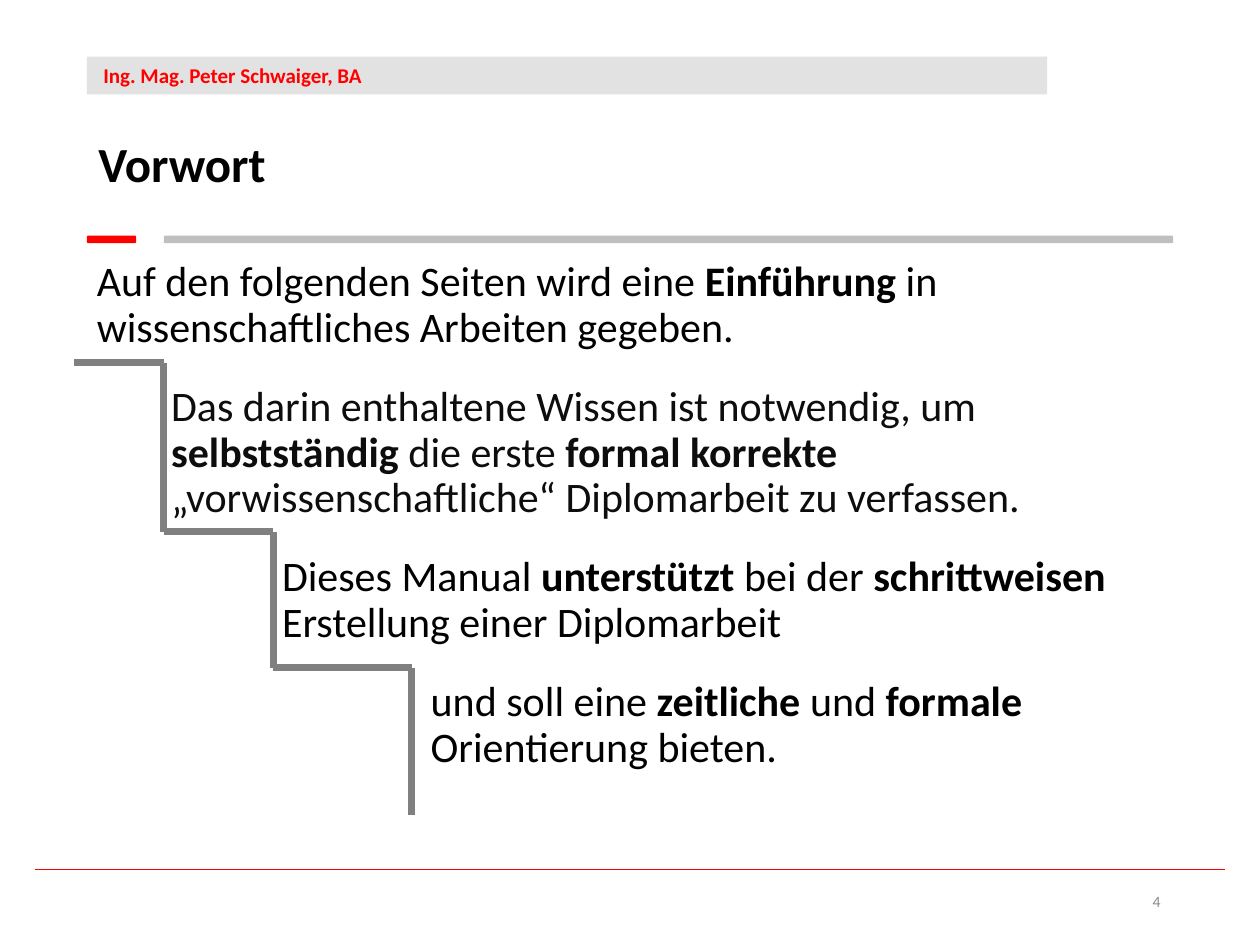
from itertools import pairwise

from lxml.etree import SubElement
from pptx import Presentation
from pptx.dml.color import RGBColor
from pptx.enum.shapes import MSO_CONNECTOR, MSO_SHAPE
from pptx.enum.text import MSO_ANCHOR, PP_ALIGN
from pptx.oxml.ns import qn
from pptx.util import Inches, Pt

RED = "FF0000"
BLACK = "000000"
GREY = "808080"


def color(hex_string):
    return RGBColor.from_string(hex_string)


def apply(target, values):
    for name, value in values.items():
        setattr(target, name, value)


class SlideBuilder:
    font_name = "Calibri"

    def __init__(self, slide):
        self.slide = slide

    def place(self, shape, box):
        names = ("left", "top", "width", "height")
        apply(shape, dict(zip(names, map(Inches, box))))

    def add_text(self, paragraph, text, size, text_color, bold=False):
        """Add runs; asterisks switch bold on and off."""
        for index, part in enumerate(text.split("*")):
            if part:
                run = paragraph.add_run()
                run.text = part
                apply(run.font, {"name": self.font_name, "size": Pt(size),
                                 "bold": bold or index % 2 == 1})
                run.font.color.rgb = color(text_color)

    def title(self, text, box):
        shape = self.slide.shapes.title
        self.place(shape, box)
        apply(shape.text_frame, {"vertical_anchor": MSO_ANCHOR.MIDDLE, "word_wrap": True})
        paragraph = shape.text_frame.paragraphs[0]
        apply(paragraph, {"alignment": PP_ALIGN.LEFT, "line_spacing": 0.9})
        self.add_text(paragraph, text, 28, BLACK, bold=True)

    def bar(self, preset, box, fill, opacity=100):
        shape = self.slide.shapes.add_shape(preset, *map(Inches, box))
        shape.shadow.inherit = False
        shape.fill.solid()
        shape.fill.fore_color.rgb = color(fill)
        shape.line.fill.background()
        if opacity < 100:
            fill_element = shape._element.spPr.find(qn("a:solidFill"))[0]
            SubElement(fill_element, qn("a:alpha")).set("val", str(opacity * 1000))
        return shape

    def line(self, start, end, line_color, width):
        connector = self.slide.shapes.add_connector(
            MSO_CONNECTOR.STRAIGHT, *map(Inches, (*start, *end)))
        connector.line.color.rgb = color(line_color)
        connector.line.width = Pt(width)
        SubElement(connector._element.spPr, qn("a:effectLst"))

    def text_box(self, box, anchor=MSO_ANCHOR.TOP):
        frame = self.slide.shapes.add_textbox(*map(Inches, box)).text_frame
        apply(frame, {"word_wrap": True, "vertical_anchor": anchor})
        return frame

    def steps(self, box, items):
        frame = self.text_box(box)
        for index, (indent, text_color, text) in enumerate(items):
            paragraph = frame.add_paragraph() if index else frame.paragraphs[0]
            paragraph._p.get_or_add_pPr().set("marL", str(Inches(indent)))
            apply(paragraph, {"line_spacing": 0.9, "space_after": Pt(12),
                              "space_before": Pt(7.5 if index else 0)})
            self.add_text(paragraph, text, 24, text_color)


def main():
    presentation = Presentation()
    apply(presentation, {"slide_width": Inches(10), "slide_height": Inches(7.5)})
    slide = presentation.slides.add_slide(presentation.slide_layouts[5])
    builder = SlideBuilder(slide)

    # Author band
    band = builder.bar(MSO_SHAPE.RECTANGLE, (0.69, 0.45, 7.62, 0.3), "D9D9D9", opacity=75)
    apply(band.text_frame, {"margin_left": Inches(0.13),
                            "vertical_anchor": MSO_ANCHOR.MIDDLE})
    author = band.text_frame.paragraphs[0]
    author.alignment = PP_ALIGN.LEFT
    builder.add_text(author, "Ing. Mag. Peter Schwaiger, BA", 12, RED, bold=True)

    # Title with divider
    builder.title("Vorwort", (0.68, 0.84, 7.62, 0.97))
    for left, width, fill in ((0.69, 0.39, RED), (1.3, 8.01, "BFBFBF")):
        builder.bar(MSO_SHAPE.ROUNDED_RECTANGLE, (left, 1.87, width, 0.06), fill)

    # Indented paragraphs
    builder.steps((0.67, 2.02, 8.57, 5.33), [
        (0, BLACK, "Auf den folgenden Seiten wird eine *Einführung* in "
                   "wissenschaftliches Arbeiten gegeben."),
        (0.59, "0D0D0D", "Das darin enthaltene Wissen ist notwendig, um *selbstständig* "
                         "die erste *formal korrekte* „vorwissenschaftliche“ "
                         "Diplomarbeit zu verfassen."),
        (1.47, BLACK, "Dieses Manual *unterstützt* bei der *schrittweisen* "
                      "Erstellung einer Diplomarbeit"),
        (2.65, BLACK, "und soll eine *zeitliche* und *formale* Orientierung bieten."),
    ])

    # Staircase beside the paragraphs
    corners = [(0.59, 2.88), (1.3, 2.88), (1.3, 4.22), (2.17, 4.22),
               (2.17, 5.3), (3.27, 5.3), (3.27, 6.47)]
    for start, end in pairwise(corners):
        builder.line(start, end, GREY, 4)

    # Footer
    builder.line((0.28, 6.9), (9.72, 6.9), RED, 1)
    number = builder.text_box((7.06, 6.95, 2.25, 0.4), MSO_ANCHOR.MIDDLE).paragraphs[0]
    number.alignment = PP_ALIGN.RIGHT
    builder.add_text(number, "4", 9, "8C8C8C")

    presentation.save("out.pptx")


if __name__ == "__main__":
    main()
